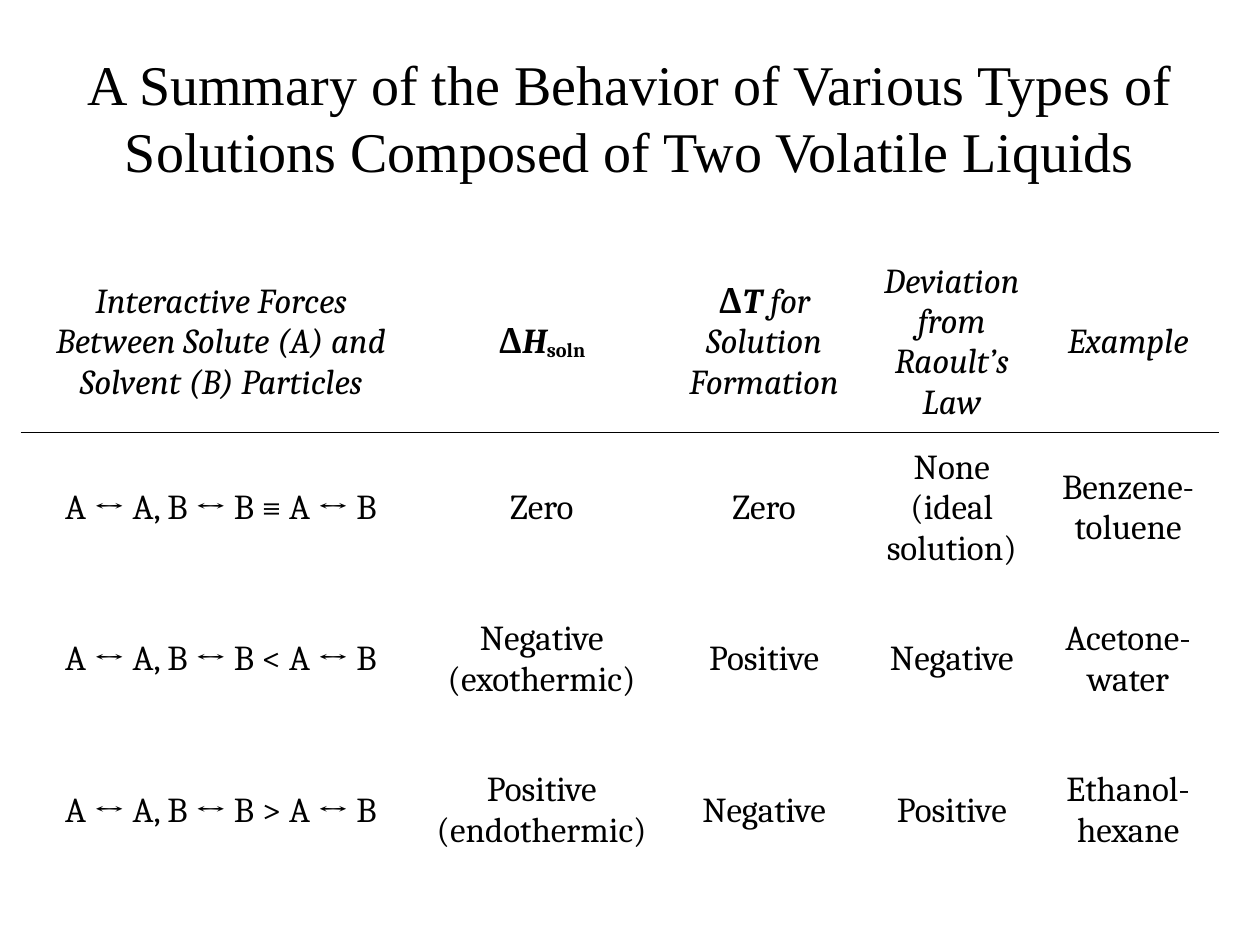
import pptx
import pptx.dml.color
import pptx.enum.text
import pptx.oxml
import pptx.oxml.ns
import pptx.util

Pt = pptx.util.Pt
COLOURS = {"ink": "000000"}
TITLE = "A Summary of the Behavior of Various Types of Solutions Composed of Two Volatile Liquids"
COLUMN_WIDTHS = [228.24, 138.24, 115.92, 98.64, 102.96]
ROW_HEIGHTS = [102.96, 86.4, 86.4, 86.4]

# Each header is a list of (text, format) spans
HEADERS = [
    [("Interactive Forces Between Solute (A) and Solvent (B) Particles", {"italic": True})],
    [("Δ", {"bold": True}), ("H", {"bold": True, "italic": True}),
     ("soln", {"bold": True, "baseline": -12})],
    [("Δ", {"bold": True}), ("T", {"bold": True, "italic": True}),
     (" for Solution Formation", {"italic": True})],
    [("Deviation from Raoult’s Law", {"italic": True})],
    [("Example", {"italic": True})],
]
BODY = [
    ["A ↔ A, B ↔ B ≡ A ↔ B", "Zero", "Zero", "None (ideal solution)", "Benzene-toluene"],
    ["A ↔ A, B ↔ B < A ↔ B", "Negative (exothermic)", "Positive", "Negative", "Acetone-water"],
    ["A ↔ A, B ↔ B > A ↔ B", "Positive (endothermic)", "Negative", "Positive", "Ethanol-hexane"],
]


def add_text(para, text, font="Cambria", size=20, bold=False, italic=False, baseline=0):
    """Add one formatted span to a centred paragraph."""
    para.alignment = pptx.enum.text.PP_ALIGN.CENTER
    span = para.add_run()
    span.text = text
    span.font.name = font
    span.font.size = Pt(size)
    span.font.bold = bold
    span.font.italic = italic
    span.font.color.rgb = pptx.dml.color.RGBColor.from_string(COLOURS["ink"])
    if baseline:
        span.font._element.set("baseline", str(baseline * 1000))


def add_rule(cell, side):
    """Draw a 1 pt border on one side of a cell ("T" or "B")."""
    line = pptx.oxml.parse_xml(
        f'<a:ln{side} {pptx.oxml.ns.nsdecls("a")} w="{Pt(1)}"><a:solidFill>'
        f'<a:srgbClr val="{COLOURS["ink"]}"/></a:solidFill></a:ln{side}>')
    cell._tc.get_or_add_tcPr().insert(0, line)


def add_title(page, left, top, width, height):
    box = page.shapes.add_textbox(Pt(left), Pt(top), Pt(width), Pt(height))
    frame = box.text_frame
    frame.word_wrap = True
    frame.vertical_anchor = pptx.enum.text.MSO_ANCHOR.MIDDLE
    para = frame.paragraphs[0]
    para.space_before = Pt(6.4)
    add_text(para, TITLE, font="Times New Roman", size=32)


def add_summary_table(page, left, top):
    rows = HEADERS + []
    rows = [HEADERS] + [[[(text, {})] for text in row] for row in BODY]
    table = page.shapes.add_table(
        len(rows), len(HEADERS), Pt(left), Pt(top),
        Pt(sum(COLUMN_WIDTHS)), Pt(sum(ROW_HEIGHTS))).table
    table.first_row = table.horz_banding = False
    for column, width in zip(table.columns, COLUMN_WIDTHS):
        column.width = Pt(width)
    for row, height in zip(table.rows, ROW_HEIGHTS):
        row.height = Pt(height)

    for row_index, row in enumerate(rows):
        for column_index, spans in enumerate(row):
            cell = table.cell(row_index, column_index)
            cell.fill.background()
            cell.vertical_anchor = pptx.enum.text.MSO_ANCHOR.MIDDLE
            for text, style in spans:
                add_text(cell.text_frame.paragraphs[0], text, **style)
            # Rule between the header and the body
            if row_index < 2:
                add_rule(cell, "BT"[row_index])


def main():
    deck = pptx.Presentation()
    deck.slide_width, deck.slide_height = Pt(720), Pt(540)
    page = deck.slides.add_slide(deck.slide_layouts[6])
    add_title(page, 18, 21.6, 684, 90)
    add_summary_table(page, 12.24, 144)
    deck.save("out.pptx")


if __name__ == "__main__":
    main()
